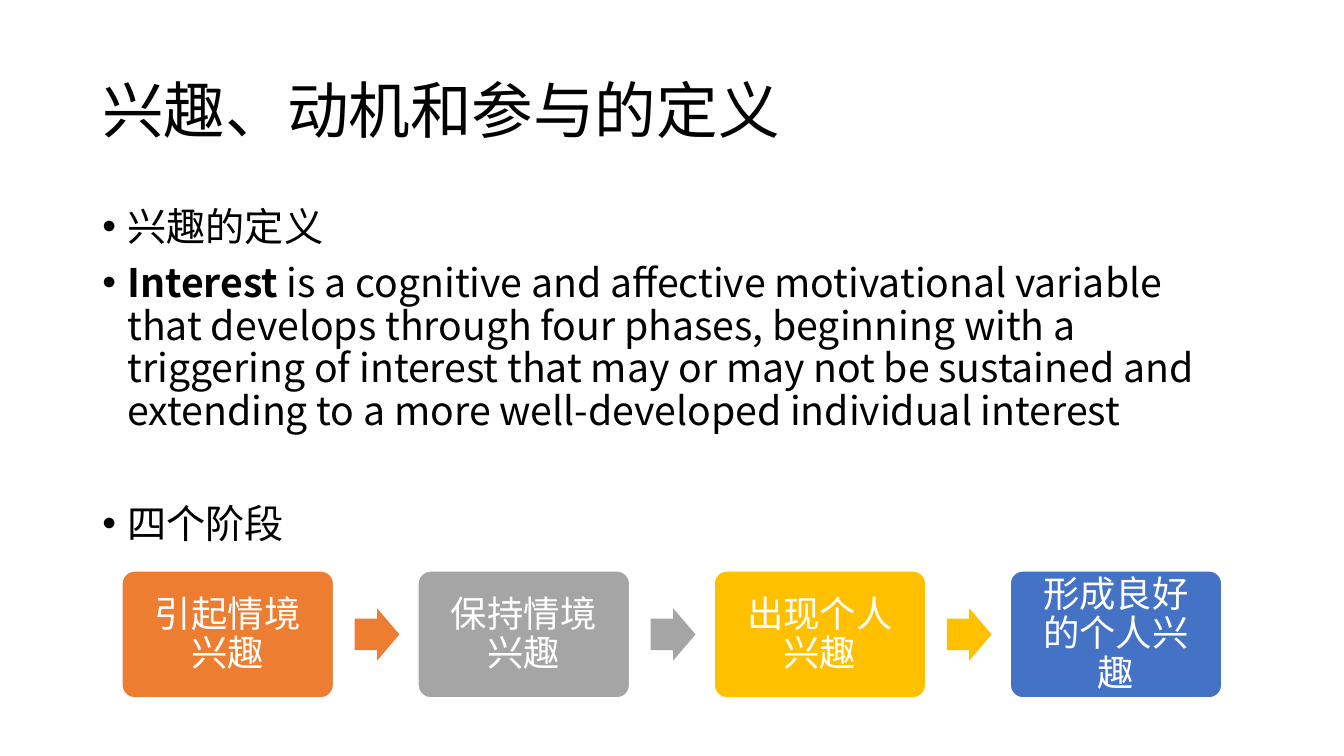
from lxml import etree
from pptx import Presentation
from pptx.dml.color import RGBColor
from pptx.enum.shapes import MSO_SHAPE
from pptx.enum.text import MSO_ANCHOR, PP_ALIGN
from pptx.oxml.ns import qn
from pptx.util import Pt

ROUNDED = MSO_SHAPE.ROUNDED_RECTANGLE
ARROW = MSO_SHAPE.RIGHT_ARROW
TOP, MIDDLE = MSO_ANCHOR.TOP, MSO_ANCHOR.MIDDLE
LEFT, CENTER = PP_ALIGN.LEFT, PP_ALIGN.CENTER

TITLE = "兴趣、动机和参与的定义"
BULLETS = [
    (10, [("兴趣的定义", False)]),
    (10, [
        ("Interest", True),
        (" is a cognitive and affective motivational variable that develops "
         "through four phases, beginning with a triggering of interest that "
         "may or may not be sustained and extending to a more well-developed "
         "individual interest", False),
    ]),
    (50.4, [("四个阶段", False)]),
]
PHASES = [
    ("引起情境兴趣", "orange"),
    ("保持情境兴趣", "gray"),
    ("出现个人兴趣", "gold"),
    ("形成良好的个人兴趣", "blue"),
]

THEME = {
    "font": "Noto Sans CJK SC",
    "title": 44, "body": 28, "phase": 26,
    "body_line": Pt(30.4), "phase_line": Pt(28.2),
    "black": "000000", "white": "FFFFFF",
    "orange": "ED7D31", "gray": "A5A5A5", "gold": "FFC000", "blue": "4472C4",
}

MARGIN, TEXT_WIDTH = 66, 828
PHASE_LEFT, PHASE_TOP, PHASE_STEP = 87.1, 407.8, 211.5
PHASE_WIDTH, PHASE_HEIGHT = 151.2, 90.7
ARROW_OFFSET, ARROW_WIDTH, ARROW_HEIGHT = 166.2, 32, 37.5


def color(name):
    return RGBColor.from_string(THEME[name])


def set_frame(frame, anchor, inset_x, inset_y):
    frame.word_wrap = True
    frame.vertical_anchor = anchor
    frame.margin_left = frame.margin_right = Pt(inset_x)
    frame.margin_top = frame.margin_bottom = Pt(inset_y)


def add_text_box(page, top, height, anchor):
    box = page.shapes.add_textbox(Pt(MARGIN), Pt(top), Pt(TEXT_WIDTH), Pt(height))
    set_frame(box.text_frame, anchor, 7.2, 3.6)
    return box.text_frame


def write(para, spans, size, color_name, line, align=LEFT):
    para.alignment = align
    para.line_spacing = line
    for text, bold in spans:
        span = para.add_run()
        span.text = text
        font = span.font
        font.size = Pt(THEME[size])
        font.bold = bold
        font.color.rgb = color(color_name)
        font.name = THEME["font"]
        east_asian = etree.SubElement(span._r.get_or_add_rPr(), qn("a:ea"))
        east_asian.set("typeface", THEME["font"])


def add_bullet(para, indent):
    properties = para._p.get_or_add_pPr()
    properties.set("marL", str(Pt(indent)))
    properties.set("indent", str(-Pt(indent)))
    font = etree.SubElement(properties, qn("a:buFont"))
    font.set("typeface", "Arial")
    etree.SubElement(properties, qn("a:buChar")).set("char", "•")


def add_block(page, kind, left, top, width, height, fill):
    block = page.shapes.add_shape(kind, Pt(left), Pt(top), Pt(width), Pt(height))
    block.shadow.inherit = False
    block.fill.solid()
    block.fill.fore_color.rgb = color(fill)
    block.line.fill.background()
    return block


def add_phase(page, left, text, fill):
    box = add_block(page, ROUNDED, left, PHASE_TOP, PHASE_WIDTH, PHASE_HEIGHT, fill)
    box.adjustments[0] = 0.1
    box.line.color.rgb = color("white")
    box.line.width = Pt(1)
    set_frame(box.text_frame, MIDDLE, 11, 0)
    write(box.text_frame.paragraphs[0], [(text, False)], "phase", "white",
          THEME["phase_line"], CENTER)


def add_arrow(page, left, fill):
    top = PHASE_TOP + (PHASE_HEIGHT - ARROW_HEIGHT) / 2
    arrow = add_block(page, ARROW, left, top, ARROW_WIDTH, ARROW_HEIGHT, fill)
    arrow.adjustments[0] = 0.6
    arrow.adjustments[1] = 0.5


def main():
    deck = Presentation()
    deck.slide_width, deck.slide_height = Pt(960), Pt(540)
    page = deck.slides.add_slide(deck.slide_layouts[6])

    title = add_text_box(page, 28.8, 104.4, MIDDLE)
    write(title.paragraphs[0], [(TITLE, False)], "title", "black", 0.9)

    body = add_text_box(page, 144, 342.7, TOP)
    for index, (space_before, spans) in enumerate(BULLETS):
        para = body.add_paragraph() if index else body.paragraphs[0]
        write(para, spans, "body", "black", THEME["body_line"])
        para.space_before = Pt(space_before)
        add_bullet(para, 18)

    for index, (text, fill) in enumerate(PHASES):
        left = PHASE_LEFT + index * PHASE_STEP
        add_phase(page, left, text, fill)
        if index < len(PHASES) - 1:
            add_arrow(page, left + ARROW_OFFSET, fill)

    deck.save("out.pptx")


if __name__ == "__main__":
    main()
